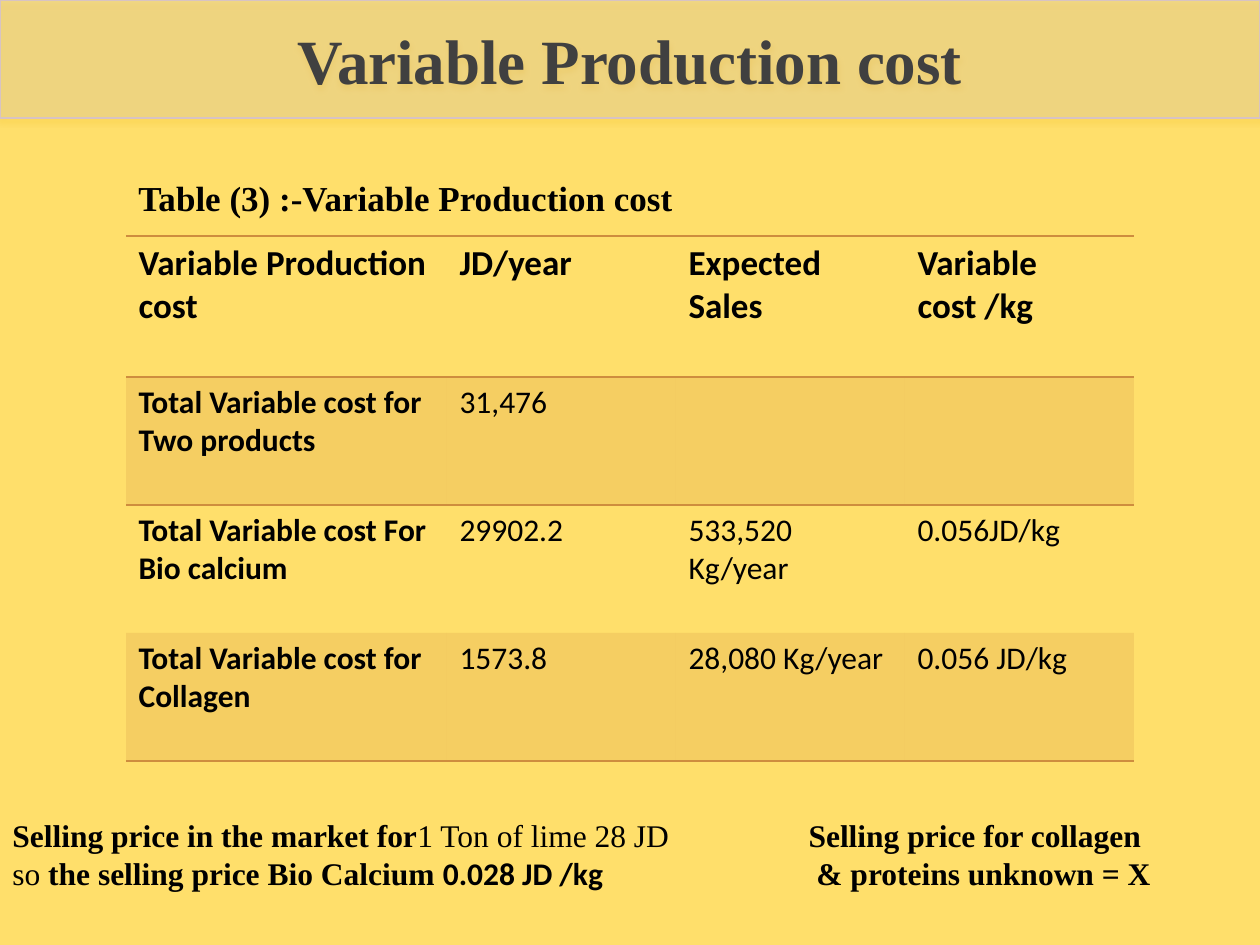
from lxml import etree
from pptx import Presentation
from pptx.dml.color import RGBColor
from pptx.enum.shapes import MSO_SHAPE
from pptx.enum.text import MSO_ANCHOR, MSO_AUTO_SIZE, PP_ALIGN
from pptx.oxml.ns import qn
from pptx.util import Cm, Pt

RECTANGLE = MSO_SHAPE.RECTANGLE
MIDDLE = MSO_ANCHOR.MIDDLE
GROW = MSO_AUTO_SIZE.SHAPE_TO_FIT_TEXT
LEFT, CENTER = PP_ALIGN.LEFT, PP_ALIGN.CENTER

COLORS = {
    "background": "FFDF6B",
    "text": "000000",
    "title": "404040",
    "banner": "D3CAC4",
    "banner_line": "D7C3C3",
    "shadow": "EEB000",
    "accent": "CE8D3E",
}
SERIF, SANS = "Times New Roman", "Calibri"
NO_STYLE = "{2D5ABB26-0587-4C30-8999-92F81FD0307C}"

COST_ROWS = [
    ["Variable Production cost", "JD/year", "Expected Sales", "Variable cost /kg"],
    ["Total Variable cost for Two products", "31,476", "", ""],
    ["Total Variable cost For Bio calcium", "29902.2", "533,520 Kg/year", "0.056JD/kg"],
    ["Total Variable cost for Collagen", "1573.8", "28,080 Kg/year", "0.056 JD/kg"],
]
LIME_PRICE = [
    [("Selling price in the market for", {"bold": True}), ("1 Ton of lime 28 JD", {})],
    [
        ("so ", {}),
        ("the selling price Bio Calcium ", {"bold": True}),
        ("0.028 JD /kg", {"bold": True, "font": SANS}),
    ],
]
COLLAGEN_PRICE = [
    [("Selling price for collagen", {"bold": True})],
    [(" & proteins unknown = X", {"bold": True})],
]


def rgb(name):
    return RGBColor.from_string(COLORS[name])


def add_span(para, text, font=SERIF, size=18, bold=False, color="text"):
    span = para.add_run()
    span.text = text
    span.font.name = font
    span.font.size = Pt(size)
    span.font.bold = bold
    span.font.color.rgb = rgb(color)


def add_color(parent, name, alpha=100):
    color = etree.SubElement(parent, qn("a:srgbClr"), val=COLORS[name])
    etree.SubElement(color, qn("a:alpha"), val=str(alpha * 1000))


def set_fill(fill, name, alpha):
    fill.solid()
    fill.fore_color.rgb = rgb(name)
    color = fill._xPr.find(qn("a:solidFill")).find(qn("a:srgbClr"))
    etree.SubElement(color, qn("a:alpha"), val=str(alpha * 1000))


def add_border(cell, side):
    properties = cell._tc.get_or_add_tcPr()
    line = etree.Element(qn(f"a:{side}"), w=str(Pt(1)))
    add_color(etree.SubElement(line, qn("a:solidFill")), "accent")
    properties.insert(0, line)


def add_banner(page, left, top, width, height):
    banner = page.shapes.add_shape(RECTANGLE, left, top, width, height)
    banner.shadow.inherit = False
    set_fill(banner.fill, "banner", 33)
    banner.line.color.rgb = rgb("banner_line")
    banner.line.width = Pt(0.75)
    effects = banner.element.spPr.find(qn("a:effectLst"))
    shadow = etree.SubElement(
        effects, qn("a:outerShdw"), blurRad=str(Pt(3.1)), dist=str(Pt(1.8)),
        dir="5400000", rotWithShape="0",
    )
    add_color(shadow, "shadow", 35)
    banner.text_frame.vertical_anchor = MIDDLE
    para = banner.text_frame.paragraphs[0]
    para.alignment = CENTER
    add_span(para, "Variable Production cost", size=36, bold=True, color="title")


def add_caption(page, left, top, width, height):
    box = page.shapes.add_textbox(left, top, width, height)
    box.text_frame.word_wrap = True
    box.text_frame.margin_top = Cm(1.17)
    para = box.text_frame.paragraphs[0]
    add_span(para, "Table (3) :-Variable Production cost", size=20, bold=True)


def add_cost_table(page, left, top, width, height):
    frame = page.shapes.add_table(len(COST_ROWS), len(COST_ROWS[0]), left, top, width, height)
    table = frame.table
    table.horz_banding = False
    next(frame.element.iter(qn("a:tableStyleId"))).text = NO_STYLE
    first_width, header_height = Cm(6.47), Cm(2.84)
    other_width = (width - first_width) // (len(table.columns) - 1)
    other_height = (height - header_height) // (len(table.rows) - 1)
    for index, column in enumerate(table.columns):
        column.width = other_width if index else first_width
    for index, row in enumerate(table.rows):
        row.height = other_height if index else header_height
    last = len(COST_ROWS) - 1
    for row_index, texts in enumerate(COST_ROWS):
        header = row_index == 0
        for column_index, text in enumerate(texts):
            cell = table.cell(row_index, column_index)
            if row_index % 2:
                set_fill(cell.fill, "accent", 20)
            else:
                cell.fill.background()
            if row_index in (0, last):
                add_border(cell, "lnB")
            if row_index in (0, 1):
                add_border(cell, "lnT")
            if text:
                add_span(
                    cell.text_frame.paragraphs[0], text, font=SANS,
                    size=20 if header else 18, bold=header or column_index == 0,
                )


def add_price_note(page, lines, left, top, width, height):
    box = page.shapes.add_textbox(left, top, width, height)
    frame = box.text_frame
    frame.word_wrap = False
    frame.auto_size = GROW
    for index, spans in enumerate(lines):
        para = frame.add_paragraph() if index else frame.paragraphs[0]
        para.alignment = LEFT
        for text, style in spans:
            add_span(para, text, **style)


def main():
    deck = Presentation()
    deck.slide_width, deck.slide_height = Cm(25.4), Cm(19.05)
    page = deck.slides.add_slide(deck.slide_layouts[6])
    page.background.fill.solid()
    page.background.fill.fore_color.rgb = rgb("background")
    add_caption(page, Cm(2.54), Cm(2.38), Cm(21.1), Cm(12.75))
    add_cost_table(page, Cm(2.54), Cm(4.76), Cm(20.32), Cm(10.58))
    add_banner(page, 0, 0, deck.slide_width, Cm(2.38))
    add_price_note(page, LIME_PRICE, 0, Cm(16.33), Cm(14.05), Cm(2.56))
    add_price_note(page, COLLAGEN_PRICE, Cm(16.05), Cm(16.33), Cm(7.47), Cm(1.8))
    deck.save("out.pptx")


if __name__ == "__main__":
    main()
